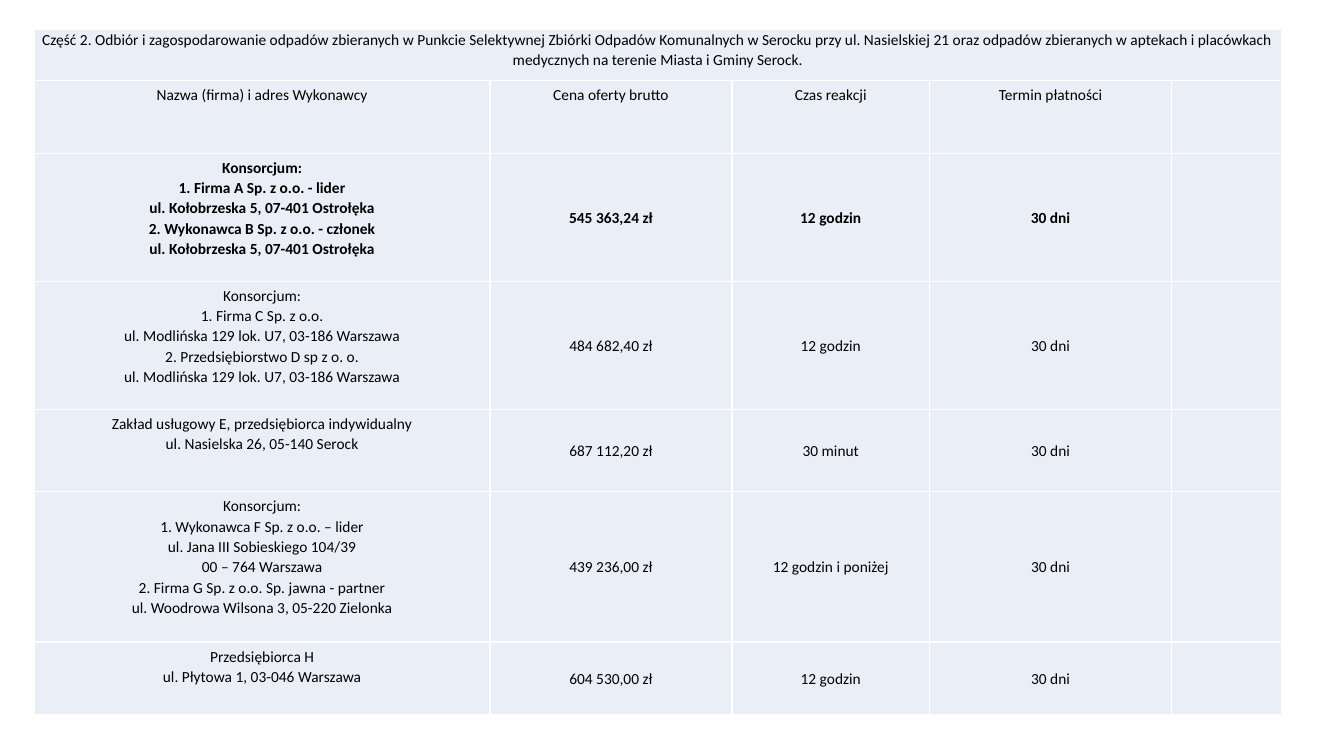
from dataclasses import dataclass

from lxml.etree import SubElement
from pptx import Presentation
from pptx.dml.color import RGBColor
from pptx.enum.text import MSO_ANCHOR, PP_ALIGN
from pptx.oxml.ns import qn
from pptx.util import Inches, Pt


@dataclass(frozen=True)
class Theme:
    font: str = "Calibri"
    text_size: float = 11
    line_spacing: float = 1.07
    text_color: str = "000000"
    cell_fill: str = "EAEFF7"
    border_color: str = "FFFFFF"
    border_width: float = 1
    cell_margin: float = 0.04


TITLE = (
    "Część 2. Odbiór i zagospodarowanie odpadów zbieranych w Punkcie Selektywnej Zbiórki "
    "Odpadów Komunalnych w Serocku przy ul. Nasielskiej 21 oraz odpadów zbieranych w aptekach "
    "i placówkach medycznych na terenie Miasta i Gminy Serock."
)
HEADINGS = ["Nazwa (firma) i adres Wykonawcy", "Cena oferty brutto", "Czas reakcji", "Termin płatności"]
OFFERS = [
    (
        "Konsorcjum:\n1. Firma A Sp. z o.o. - lider\nul. Kołobrzeska 5, 07-401 Ostrołęka\n"
        "2. Wykonawca B Sp. z o.o. - członek\nul. Kołobrzeska 5, 07-401 Ostrołęka",
        "545 363,24 zł", "12 godzin", "30 dni",
    ),
    (
        "Konsorcjum:\n1. Firma C Sp. z o.o.\nul. Modlińska 129 lok. U7, 03-186 Warszawa\n"
        "2. Przedsiębiorstwo D sp z o. o.\nul. Modlińska 129 lok. U7, 03-186 Warszawa",
        "484 682,40 zł", "12 godzin", "30 dni",
    ),
    (
        "Zakład usługowy E, przedsiębiorca indywidualny\nul. Nasielska 26, 05-140 Serock",
        "687 112,20 zł", "30 minut", "30 dni",
    ),
    (
        "Konsorcjum:\n1. Wykonawca F Sp. z o.o. – lider\nul. Jana III Sobieskiego 104/39\n"
        "00 – 764 Warszawa\n2. Firma G Sp. z o.o. Sp. jawna - partner\n"
        "ul. Woodrowa Wilsona 3, 05-220 Zielonka",
        "439 236,00 zł", "12 godzin i poniżej", "30 dni",
    ),
    (
        "Przedsiębiorca H\nul. Płytowa 1, 03-046 Warszawa",
        "604 530,00 zł", "12 godzin", "30 dni",
    ),
]
COLUMN_WIDTHS = [4.52, 2.4, 1.96, 2.4, 1.09]
ROW_HEIGHTS = [0.51, 0.72, 1.27, 1.27, 0.82, 1.49, 0.72]
HEADING_ROW = 1
FIRST_OFFER_ROW = 2
SELECTED_ROW = 2


class SlideBuilder:
    def __init__(self, slide, theme):
        self.slide = slide
        self.theme = theme

    def table(self, left, top, column_widths, row_heights):
        frame = self.slide.shapes.add_table(
            len(row_heights), len(column_widths), Inches(left), Inches(top),
            Inches(sum(column_widths)), Inches(sum(row_heights)),
        )
        table = frame.table
        table.first_row = False
        table.horz_banding = False
        for column, width in zip(table.columns, column_widths):
            column.width = Inches(width)
        for row, height in zip(table.rows, row_heights):
            row.height = Inches(height)
        for cell in table.iter_cells():
            self.borders(cell)
            cell.fill.solid()
            cell.fill.fore_color.rgb = RGBColor.from_string(self.theme.cell_fill)
        return table

    def borders(self, cell):
        properties = cell._tc.get_or_add_tcPr()
        for side in ("a:lnL", "a:lnR", "a:lnT", "a:lnB"):
            line = SubElement(properties, qn(side), w=str(Pt(self.theme.border_width)))
            fill = SubElement(line, qn("a:solidFill"))
            SubElement(fill, qn("a:srgbClr"), val=self.theme.border_color)

    def cell_text(self, cell, text, anchor=MSO_ANCHOR.TOP, bold=False, margin=None):
        inset = Inches(self.theme.cell_margin if margin is None else margin)
        cell.margin_left = cell.margin_right = cell.margin_top = cell.margin_bottom = inset
        cell.vertical_anchor = anchor
        cell.text_frame.text = text
        for paragraph in cell.text_frame.paragraphs:
            paragraph.alignment = PP_ALIGN.CENTER
            paragraph.line_spacing = self.theme.line_spacing
            for run in paragraph.runs:
                run.font.name = self.theme.font
                run.font.size = Pt(self.theme.text_size)
                run.font.bold = bold
                run.font.color.rgb = RGBColor.from_string(self.theme.text_color)


def main():
    presentation = Presentation()
    presentation.slide_width = Inches(13.33)
    presentation.slide_height = Inches(7.5)
    slide = presentation.slides.add_slide(presentation.slide_layouts[6])
    builder = SlideBuilder(slide, Theme())

    table = builder.table(0.34, 0.29, COLUMN_WIDTHS, ROW_HEIGHTS)
    title_cell = table.cell(0, 0)
    title_cell.merge(table.cell(0, len(COLUMN_WIDTHS) - 1))
    builder.cell_text(title_cell, TITLE, margin=0)
    for column, heading in enumerate(HEADINGS):
        builder.cell_text(table.cell(HEADING_ROW, column), heading)
    for row, offer in enumerate(OFFERS, start=FIRST_OFFER_ROW):
        for column, text in enumerate(offer):
            anchor = MSO_ANCHOR.MIDDLE if column else MSO_ANCHOR.TOP
            builder.cell_text(table.cell(row, column), text, anchor, bold=row == SELECTED_ROW)

    presentation.save("out.pptx")


if __name__ == "__main__":
    main()
